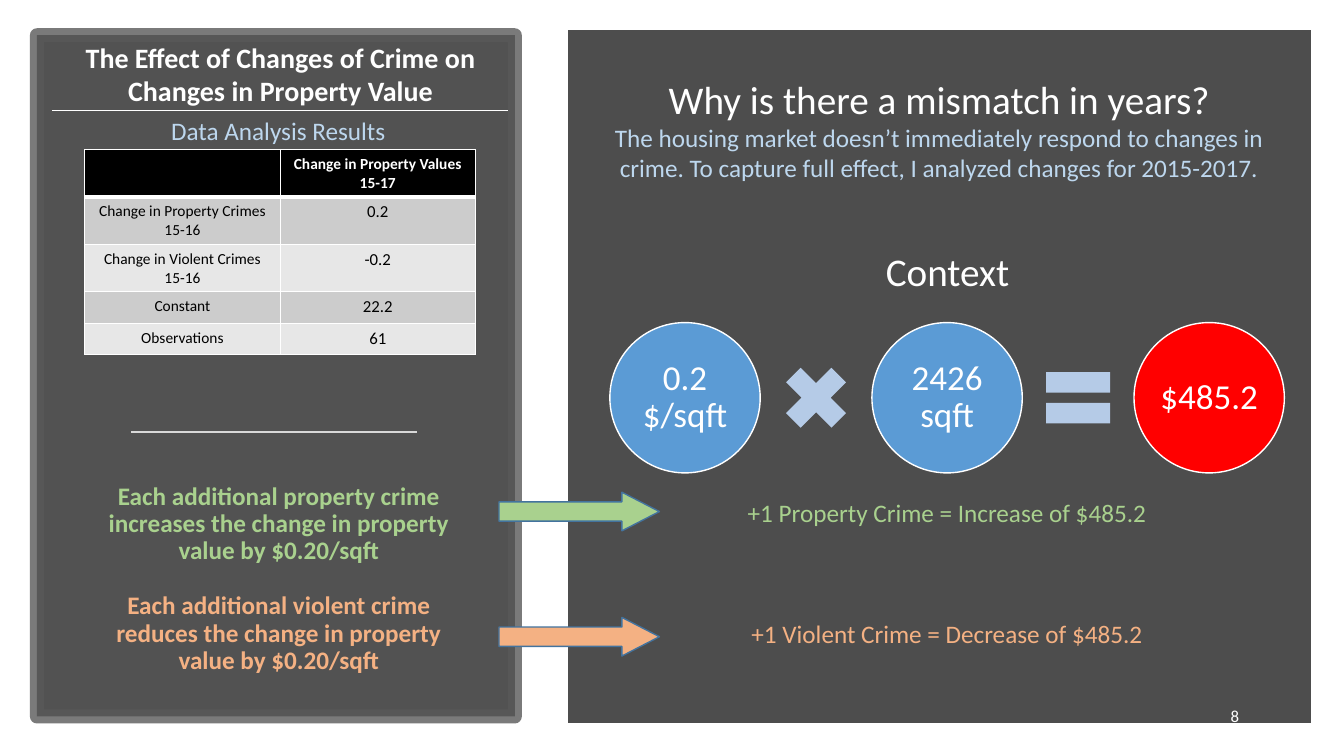
from lxml.etree import SubElement
from pptx import Presentation
from pptx.dml.color import RGBColor
from pptx.enum.shapes import MSO_CONNECTOR, MSO_SHAPE as SHAPE
from pptx.enum.text import MSO_ANCHOR as ANCHOR, PP_ALIGN as ALIGN
from pptx.oxml.ns import qn
from pptx.util import Inches, Pt

CELL = Inches(1 / 12)
COLS, ROWS = 160, 90
FONT = "Calibri"

WHITE = RGBColor(0xFF, 0xFF, 0xFF)
BLACK = RGBColor(0x00, 0x00, 0x00)
CHARCOAL = RGBColor(0x40, 0x40, 0x40)
FRAME = RGBColor(0x59, 0x59, 0x59)
PANEL = RGBColor(0x4D, 0x4D, 0x4D)
RULE = RGBColor(0xD9, 0xD9, 0xD9)
BAND_DARK = RGBColor(0xCC, 0xCC, 0xCC)
BAND_LIGHT = RGBColor(0xE7, 0xE7, 0xE7)
PALE_BLUE = RGBColor(0xBD, 0xD7, 0xEE)
OPERATOR = RGBColor(0xB5, 0xCB, 0xE7)
BLUE = RGBColor(0x5B, 0x9B, 0xD5)
RED = RGBColor(0xFF, 0x00, 0x00)
GREEN = RGBColor(0xA9, 0xD1, 0x8E)
ORANGE = RGBColor(0xF4, 0xB1, 0x83)
ARROW_EDGE = RGBColor(0x43, 0x73, 0x9E)

RESULTS = [
    ("", "Change in Property Values 15-17"),
    ("Change in Property Crimes 15-16", "0.2"),
    ("Change in Violent Crimes 15-16", "-0.2"),
    ("Constant", "22.2"),
    ("Observations", "61"),
]
RESULT_ROWS = [5.65, 5.65, 5.65, 3.75, 3.75]
FACTORS = [("0.2 $/sqft", BLUE), ("2426 sqft", BLUE), ("$485.2", RED)]
OPERATORS = [SHAPE.MATH_MULTIPLY, SHAPE.MATH_EQUAL]


def grid(*cells):
    return [round(c * CELL) for c in cells]


def style(p, size, color, bold=False, align=ALIGN.CENTER):
    p.alignment = align
    for r in p.runs:
        r.font.name = FONT
        r.font.size = Pt(size)
        r.font.bold = bold
        r.font.color.rgb = color


def set_alpha(fill_parent, percent):
    clr = fill_parent.find(qn("a:solidFill"))[0]
    SubElement(clr, qn("a:alpha"), val=str(percent * 1000))


def add_shape(s, kind, box, fill, line=None, width=1):
    sp = s.shapes.add_shape(kind, *grid(*box))
    sp.shadow.inherit = False
    sp.fill.solid()
    sp.fill.fore_color.rgb = fill
    if line is None:
        sp.line.fill.background()
    else:
        sp.line.color.rgb = line
        sp.line.width = Pt(width)
    return sp


def add_text(s, box, lines, align=ALIGN.CENTER, anchor=ANCHOR.TOP, wrap=True,
             gap=0, spacing=None):
    tf = s.shapes.add_textbox(*grid(*box)).text_frame
    tf.word_wrap = wrap
    tf.vertical_anchor = anchor
    for i, (text, size, color, bold) in enumerate(lines):
        p = tf.add_paragraph() if i else tf.paragraphs[0]
        p.text = text
        style(p, size, color, bold, align)
        if i and gap:
            p.space_before = Pt(gap)
        if spacing:
            p.line_spacing = spacing


def add_rule(s, x1, x2, y, color, width):
    c = s.shapes.add_connector(MSO_CONNECTOR.STRAIGHT, *grid(x1, y, x2, y))
    c.line.color.rgb = color
    c.line.width = Pt(width)
    SubElement(c._element.spPr, qn("a:effectLst"))


def add_borders(cell, header):
    tcPr = cell._tc.get_or_add_tcPr()
    for side in "LRTB":
        width = 3 if header and side == "B" else 1
        ln = SubElement(tcPr, qn(f"a:ln{side}"), w=str(Pt(width)))
        fill = SubElement(ln, qn("a:solidFill"))
        SubElement(fill, qn("a:srgbClr"), val=str(WHITE))


def add_results(s, left, top, col_width):
    box = grid(left, top, 2 * col_width, sum(RESULT_ROWS))
    table = s.shapes.add_table(len(RESULTS), 2, *box).table
    for col in table.columns:
        col.width = grid(col_width)[0]
    for i, (height, values) in enumerate(zip(RESULT_ROWS, RESULTS)):
        table.rows[i].height = grid(height)[0]
        header = i == 0
        band = BLACK if header else BAND_DARK if i % 2 else BAND_LIGHT
        for j, value in enumerate(values):
            cell = table.cell(i, j)
            add_borders(cell, header)
            cell.fill.solid()
            cell.fill.fore_color.rgb = band
            p = cell.text_frame.paragraphs[0]
            p.text = value
            style(p, 12 if j and not header else 11,
                  WHITE if header else BLACK, header)


def add_equation(s, left, top, size, pitch):
    for i, (text, color) in enumerate(FACTORS):
        sp = add_shape(s, SHAPE.OVAL, (left + i * pitch, top, size, size),
                       color, WHITE)
        tf = sp.text_frame
        tf.word_wrap = True
        tf.vertical_anchor = ANCHOR.MIDDLE
        tf.margin_left = tf.margin_right = Inches(0.03)
        tf.margin_top = tf.margin_bottom = Inches(0.03)
        p = tf.paragraphs[0]
        p.text = text
        p.line_spacing = 0.9
        style(p, 25, WHITE)
    sign = 10.4
    offset = (size + pitch - sign) / 2
    for i, kind in enumerate(OPERATORS):
        add_shape(s, kind, (left + i * pitch + offset,
                            top + (size - sign) / 2, sign, sign), OPERATOR)


def add_arrow(s, top, color):
    sp = add_shape(s, SHAPE.RIGHT_ARROW, (59.4, top, 19.1, 4.6), color,
                   ARROW_EDGE)
    sp.adjustments[0] = 0.5
    sp.adjustments[1] = 0.97


def add_left_panel(s):
    frame = add_shape(s, SHAPE.RECTANGLE, (4.4, 4.2, 56.9, 81.1), CHARCOAL,
                      FRAME, 10)
    set_alpha(frame._element.spPr, 90)
    set_alpha(frame.line._ln, 80)
    add_text(s, (9.2, 57, 48, 28.3), [
        ("Each additional property crime increases the change in property "
         "value by $0.20/sqft", 18, GREEN, True),
        ("Each additional violent crime reduces the change in property "
         "value by $0.20/sqft", 18, ORANGE, True),
    ], gap=19.8, spacing=0.9)
    add_rule(s, 15.6, 49.6, 51.4, RULE, 1.75)
    add_results(s, 10.1, 17.8, 23.25)
    add_text(s, (19.2, 13.1, 28.2, 4.8),
             [("Data Analysis Results", 18, PALE_BLUE, False)],
             align=ALIGN.LEFT, wrap=False)
    add_text(s, (6.2, 4.2, 54.4, 9.2),
             [("The Effect of Changes of Crime on Changes in Property Value",
               20, WHITE, True)])
    add_rule(s, 6.2, 60.5, 13.1, WHITE, 0.5)


def add_right_panel(s):
    add_shape(s, SHAPE.RECTANGLE, (67.5, 3.4, 88.7, 82.9), PANEL, WHITE, 2)
    add_equation(s, 72.6, 38.4, 17.9, 31.2)
    add_text(s, (112.7, 82.8, 36, 4.8), [("8", 12, WHITE, False)],
             align=ALIGN.RIGHT, anchor=ANCHOR.MIDDLE)
    add_text(s, (74, 58.6, 77.5, 19.4), [
        ("+1 Property Crime = Increase of $485.2", 18, GREEN, False),
        ("+1 Violent Crime = Decrease of $485.2", 18, ORANGE, False),
    ], gap=65)
    add_arrow(s, 58.6, GREEN)
    add_arrow(s, 73.5, ORANGE)
    add_text(s, (90.4, 28.8, 44.8, 6.8), [("Context", 28, WHITE, False)])
    add_text(s, (69.2, 8.4, 85.2, 14.2), [
        ("Why is there a mismatch in years?", 28, WHITE, False),
        ("The housing market doesn’t immediately respond to changes in "
         "crime. To capture full effect, I analyzed changes for 2015-2017.",
         18, PALE_BLUE, False),
    ])


def main():
    prs = Presentation()
    prs.slide_width, prs.slide_height = grid(COLS, ROWS)
    s = prs.slides.add_slide(prs.slide_layouts[6])
    add_left_panel(s)
    add_right_panel(s)
    prs.save("out.pptx")


if __name__ == "__main__":
    main()
